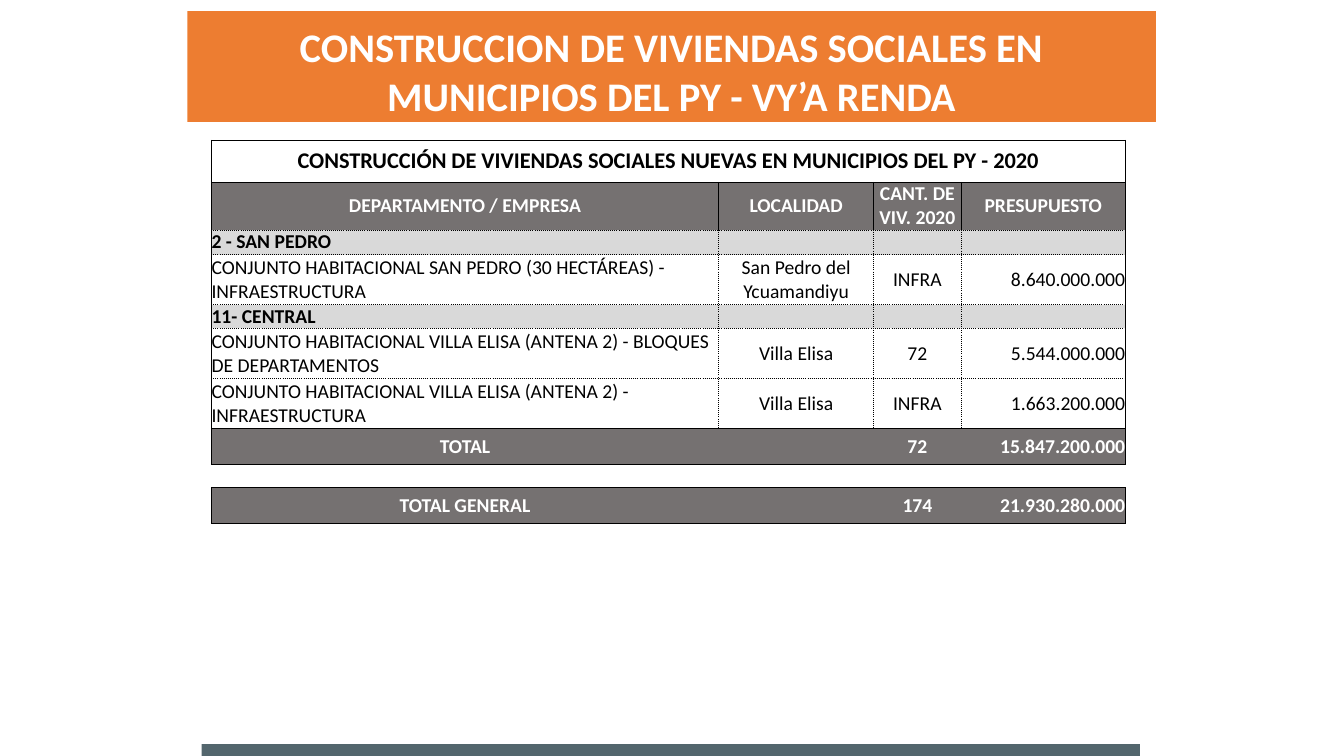
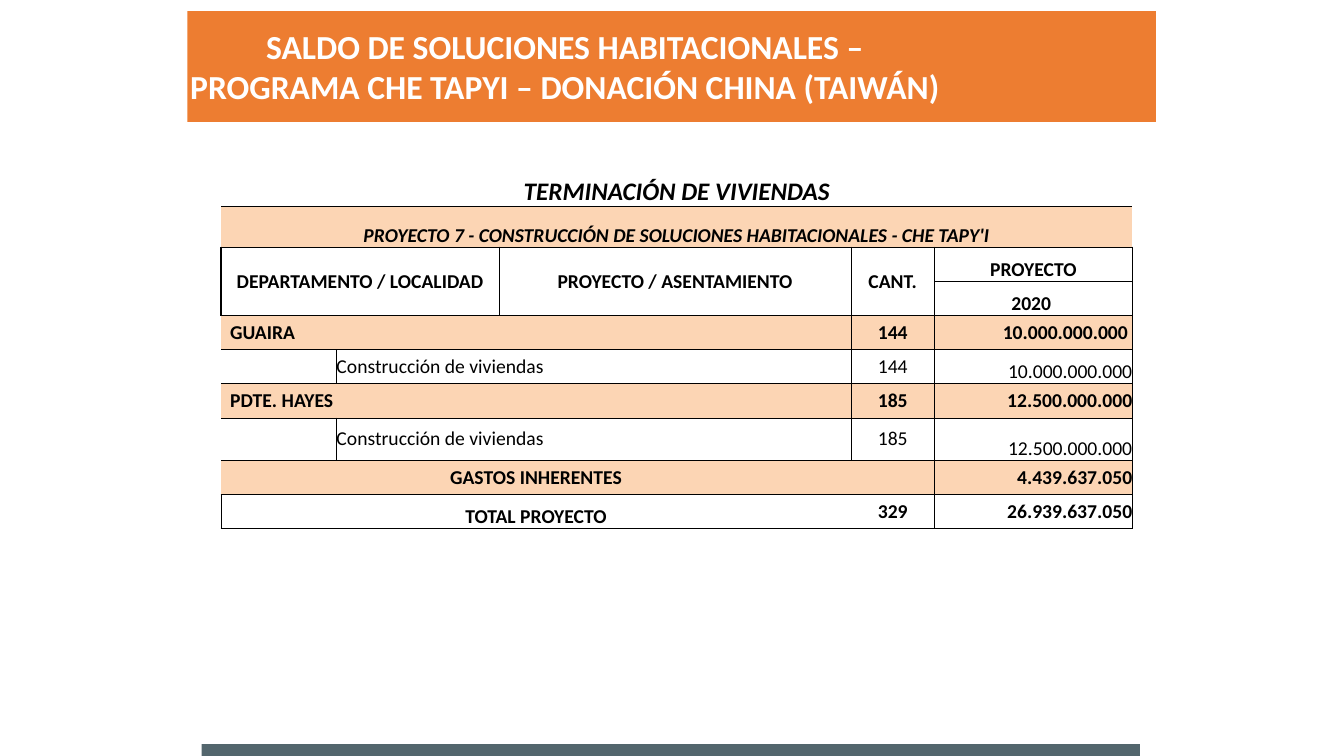
"""Builds two slides on social housing budgets, each with a banded title and a table."""
from dataclasses import dataclass

from lxml import etree
from pptx import Presentation
from pptx.dml.color import RGBColor
from pptx.enum.shapes import MSO_SHAPE
from pptx.enum.text import MSO_ANCHOR, MSO_AUTO_SIZE, PP_ALIGN
from pptx.oxml.ns import qn
from pptx.util import Cm, Pt

LEFT, CENTER, RIGHT = PP_ALIGN.LEFT, PP_ALIGN.CENTER, PP_ALIGN.RIGHT
MIDDLE, BOTTOM = MSO_ANCHOR.MIDDLE, MSO_ANCHOR.BOTTOM
RECTANGLE = MSO_SHAPE.RECTANGLE
NO_AUTO_SIZE = MSO_AUTO_SIZE.NONE

FONT = "Calibri"
BLACK, WHITE = "000000", "FFFFFF"
ORANGE, SLATE = "ED7D31", "53666D"
DARK_GRAY, LIGHT_GRAY, PEACH = "757171", "D9D9D9", "FCD5B4"
TITLE_ONLY_LAYOUT = 5
LINE_STYLES = {"s": (0.5, "solid"), "d": (0.5, "sysDot"), "k": (1, "solid")}


@dataclass(frozen=True)
class Box:
    """A position and size in centimetres."""
    left: float
    top: float
    width: float
    height: float


@dataclass(frozen=True)
class Cell:
    """A filled-in table cell, its span and its text layout."""
    column: int
    text: str
    align: PP_ALIGN = CENTER
    columns: int = 1
    rows: int = 1
    anchor: MSO_ANCHOR = MIDDLE
    pad_left: float = 0
    pad_right: float = 0


@dataclass(frozen=True)
class Row:
    """A table row; edges holds one line style per column boundary."""
    height: float
    edges: str
    top: str
    bottom: str
    cells: tuple[Cell, ...] = ()
    fill: str | None = None
    color: str = BLACK
    size: float = 14
    bold: bool = True
    italic: bool = False


@dataclass(frozen=True)
class TableSlide:
    """Everything that differs between the slides."""
    title: str
    title_size: float
    title_box: Box
    left: float
    top: float
    widths: tuple[float, ...]
    rows: tuple[Row, ...]


BANDS = (
    (Box(5.08, 18.75, 23.65, 0.3), SLATE),
    (Box(4.72, 0.28, 24.41, 2.79), ORANGE),
)


def section(height: float, text: str) -> Row:
    """Return a department heading of the construction table."""
    return Row(height, "sddds", "d", "d", (Cell(0, text, LEFT),), LIGHT_GRAY)


def project(name: str, town: str, homes: str, budget: str, bottom: str = "d") -> Row:
    """Return a project line of the construction table."""
    cells = (Cell(0, name, LEFT), Cell(1, town), Cell(2, homes), Cell(3, budget, RIGHT))
    return Row(1.26, "sddds", "d", bottom, cells, bold=False)


def total(label: str, homes: str, budget: str) -> Row:
    """Return a dark total line of the construction table."""
    cells = (Cell(0, label), Cell(2, homes), Cell(3, budget, RIGHT))
    return Row(0.91, "s---s", "s", "s", cells, DARK_GRAY, WHITE)


def department(name: str, homes: str, budget: str, top: str = "s", pad: float = 0) -> Row:
    """Return a department line of the completion table."""
    cells = (Cell(0, name, LEFT, columns=3, pad_left=0.23), Cell(3, homes),
             Cell(4, budget, RIGHT, pad_right=pad))
    return Row(0.86, "---sss", top, "s", cells, PEACH)


def works(height: float, homes: str, budget: str) -> Row:
    """Return a building-works line of the completion table."""
    cells = (Cell(1, "Construcción de viviendas", LEFT, columns=2), Cell(3, homes),
             Cell(4, budget, RIGHT, anchor=BOTTOM))
    return Row(height, "-s-sss", "s", "s", cells, bold=False)


CONSTRUCTION = TableSlide(
    "CONSTRUCCION DE VIVIENDAS SOCIALES EN MUNICIPIOS DEL PY - VY’A RENDA",
    29, Box(6.35, 0.41, 21.16, 2.74), 5.33, 3.53, (12.78, 3.91, 2.2, 4.14),
    (
        Row(1.06, "s---s", "s", "s", (
            Cell(0, "CONSTRUCCIÓN DE VIVIENDAS SOCIALES NUEVAS EN MUNICIPIOS DEL PY - 2020",
                 columns=4),), size=16),
        Row(1.2, "sssss", "s", "d", (
            Cell(0, "DEPARTAMENTO / EMPRESA"), Cell(1, "LOCALIDAD"),
            Cell(2, "CANT. DE VIV. 2020"), Cell(3, "PRESUPUESTO")), DARK_GRAY, WHITE),
        section(0.62, "2 - SAN PEDRO"),
        project("CONJUNTO HABITACIONAL SAN PEDRO (30 HECTÁREAS) - INFRAESTRUCTURA",
                "San Pedro del Ycuamandiyu", "INFRA", "8.640.000.000"),
        section(0.58, "11- CENTRAL"),
        project("CONJUNTO HABITACIONAL VILLA ELISA (ANTENA 2) - BLOQUES DE DEPARTAMENTOS",
                "Villa Elisa", "72", "5.544.000.000"),
        project("CONJUNTO HABITACIONAL VILLA ELISA (ANTENA 2) - INFRAESTRUCTURA",
                "Villa Elisa", "INFRA", "1.663.200.000", "s"),
        total("TOTAL", "72", "15.847.200.000"),
        Row(0.58, "-----", "s", "s", size=10),
        total("TOTAL GENERAL", "174", "21.930.280.000"),
    ),
)

COMPLETION = TableSlide(
    "SALDO DE SOLUCIONES HABITACIONALES –\nPROGRAMA CHE TAPYI – DONACIÓN CHINA (TAIWÁN)",
    24, Box(3.53, 0.51, 21.41, 2.31), 5.57, 4.33, (2.91, 4.1, 8.87, 2.1, 4.99),
    (
        Row(0.88, "------", "-", "k", (
            Cell(0, "TERMINACIÓN DE VIVIENDAS", columns=5, anchor=BOTTOM),),
            size=18, italic=True),
        Row(1.02, "------", "k", "k", (
            Cell(0, "PROYECTO 7 - CONSTRUCCIÓN DE SOLUCIONES HABITACIONALES - CHE TAPY'I",
                 columns=5, anchor=BOTTOM),), PEACH, italic=True),
        Row(0.86, "k-sssk", "k", "s", (
            Cell(0, "DEPARTAMENTO / LOCALIDAD", columns=2, rows=2),
            Cell(2, "PROYECTO / ASENTAMIENTO", rows=2), Cell(3, "CANT.", rows=2),
            Cell(4, "PROYECTO", anchor=BOTTOM))),
        Row(0.86, "k-sssk", "s", "k", (Cell(4, "2020", anchor=BOTTOM, pad_right=0.11),)),
        department("GUAIRA", "144", "10.000.000.000", "k", 0.11),
        works(0.86, "144", "10.000.000.000"),
        department("PDTE. HAYES", "185", "12.500.000.000"),
        works(1.07, "185", "12.500.000.000"),
        Row(0.86, "----ss", "s", "s", (
            Cell(0, "GASTOS INHERENTES", columns=3), Cell(4, "4.439.637.050", RIGHT)), PEACH),
        Row(0.86, "s---ss", "s", "s", (
            Cell(0, "TOTAL PROYECTO", columns=3, anchor=BOTTOM), Cell(3, "329"),
            Cell(4, "26.939.637.050", RIGHT))),
    ),
)


def rgb(color: str) -> RGBColor:
    """Return the colour for a hex string."""
    return RGBColor.from_string(color)


def set_font(paragraph, size: float, color: str, bold: bool, italic: bool = False) -> None:
    """Format a whole paragraph."""
    font = paragraph.font
    font.name, font.size, font.bold, font.italic = FONT, Pt(size), bold, italic
    font.color.rgb = rgb(color)


def add_bands(slide) -> None:
    """Draw the coloured bands behind the title."""
    for index, (box, color) in enumerate(BANDS):
        band = slide.shapes.add_shape(
            RECTANGLE, Cm(box.left), Cm(box.top), Cm(box.width), Cm(box.height))
        band.shadow.inherit = False
        band.fill.solid()
        band.fill.fore_color.rgb = rgb(color)
        band.line.fill.background()
        slide.shapes.element.insert(2 + index, band.element)


def set_title(slide, content: TableSlide) -> None:
    """Place and format the title placeholder."""
    title, box = slide.shapes.title, content.title_box
    title.left, title.top = Cm(box.left), Cm(box.top)
    title.width, title.height = Cm(box.width), Cm(box.height)
    frame = title.text_frame
    frame.text = content.title
    frame.word_wrap, frame.auto_size = True, NO_AUTO_SIZE
    frame.vertical_anchor = MIDDLE
    for paragraph in frame.paragraphs:
        paragraph.alignment = CENTER
        set_font(paragraph, content.title_size, WHITE, True)


def set_border(cell, side: str, style: str) -> None:
    """Draw one side of a table cell, or leave it open."""
    line = etree.SubElement(cell._tc.get_or_add_tcPr(), qn(f"a:ln{side}"))
    if style not in LINE_STYLES:
        etree.SubElement(line, qn("a:noFill"))
        return
    width, dash = LINE_STYLES[style]
    line.set("w", str(int(Pt(width))))
    fill = etree.SubElement(line, qn("a:solidFill"))
    etree.SubElement(fill, qn("a:srgbClr")).set("val", BLACK)
    etree.SubElement(line, qn("a:prstDash")).set("val", dash)


def format_cell(cell, row: Row, content: Cell, borders: dict[str, str]) -> None:
    """Write a cell with its borders, fill and font."""
    for side, style in borders.items():
        set_border(cell, side, style)
    cell.margin_left, cell.margin_right = Cm(content.pad_left), Cm(content.pad_right)
    cell.margin_top = cell.margin_bottom = 0
    cell.vertical_anchor = content.anchor
    if row.fill:
        cell.fill.solid()
        cell.fill.fore_color.rgb = rgb(row.fill)
    else:
        cell.fill.background()
    paragraph = cell.text_frame.paragraphs[0]
    if content.text:
        paragraph.text = content.text
    paragraph.alignment = content.align
    set_font(paragraph, row.size, row.color, row.bold, row.italic)
    if not content.text:
        end = etree.SubElement(paragraph._p, qn("a:endParaRPr"))
        end.set("sz", str(int(row.size * 100)))


def add_budget_table(slide, content: TableSlide) -> None:
    """Add the table and fill it row by row."""
    rows, widths = content.rows, content.widths
    table = slide.shapes.add_table(
        len(rows), len(widths), Cm(content.left), Cm(content.top),
        Cm(sum(widths)), Cm(sum(row.height for row in rows))).table
    table.first_row = table.horz_banding = False
    for column, width in zip(table.columns, widths):
        column.width = Cm(width)
    covered = set()
    for row_index, row in enumerate(rows):
        table.rows[row_index].height = Cm(row.height)
        filled = {cell.column: cell for cell in row.cells}
        for column in range(len(widths)):
            if (row_index, column) in covered:
                continue
            cell = filled.get(column, Cell(column, ""))
            last_row, last_column = row_index + cell.rows - 1, column + cell.columns - 1
            borders = {"L": row.edges[column], "R": row.edges[last_column + 1],
                       "T": row.top, "B": rows[last_row].bottom}
            for y in range(row_index, last_row + 1):
                for x in range(column, last_column + 1):
                    covered.add((y, x))
                    outline = {"L": x == column, "R": x == last_column,
                               "T": y == row_index, "B": y == last_row}
                    sides = {side: style if outline[side] else "-"
                             for side, style in borders.items()}
                    first = (y, x) == (row_index, column)
                    format_cell(table.cell(y, x), row, cell if first else Cell(x, ""),
                                borders if first else sides)
            if cell.rows * cell.columns > 1:
                table.cell(row_index, column).merge(table.cell(last_row, last_column))


def main() -> None:
    """Build and save the presentation."""
    presentation = Presentation()
    presentation.slide_width, presentation.slide_height = Cm(33.87), Cm(19.05)
    for content in (CONSTRUCTION, COMPLETION):
        slide = presentation.slides.add_slide(presentation.slide_layouts[TITLE_ONLY_LAYOUT])
        add_bands(slide)
        set_title(slide, content)
        add_budget_table(slide, content)
    presentation.save("out.pptx")


if __name__ == "__main__":
    main()
